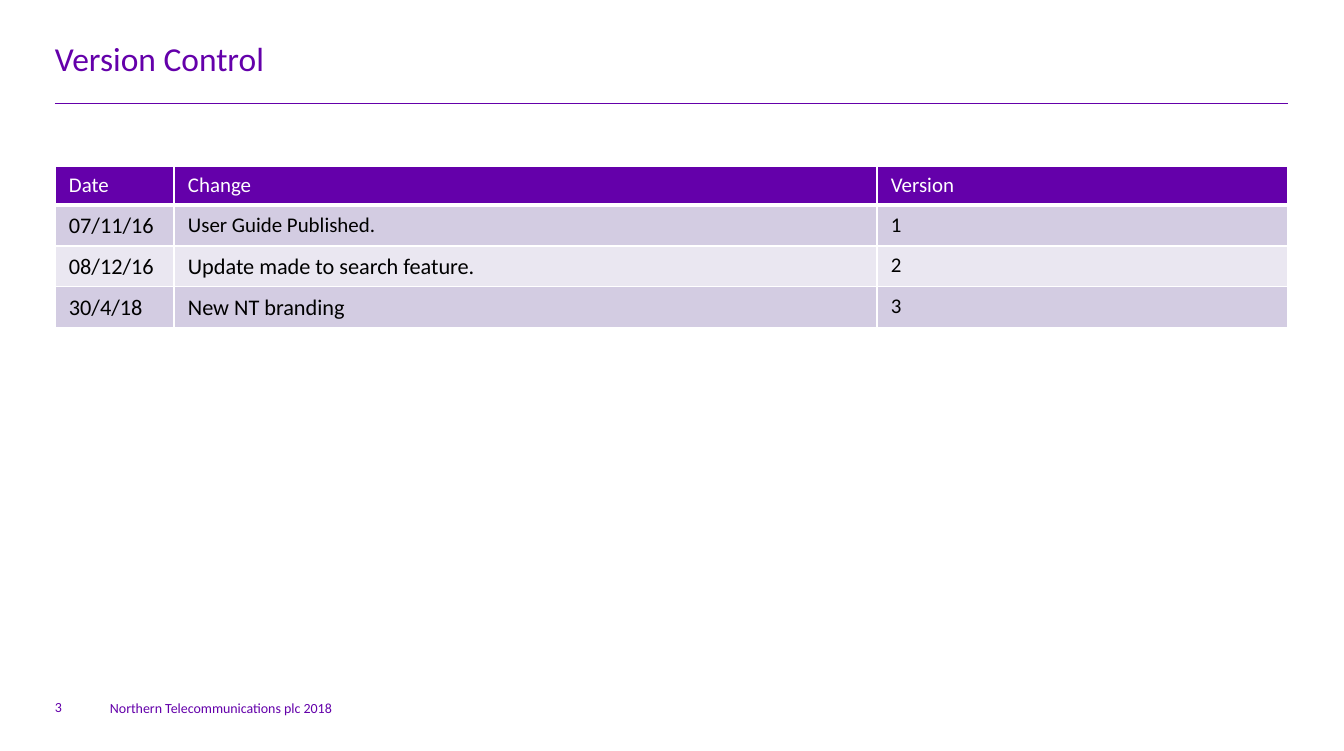
from lxml import etree
from pptx import Presentation
from pptx.dml.color import RGBColor
from pptx.enum.shapes import MSO_CONNECTOR as CONN
from pptx.enum.text import MSO_ANCHOR as ANCHOR
from pptx.oxml.ns import qn
from pptx.util import Pt

# Content
PURPLE, WHITE, BLACK = "6400AA", "FFFFFF", "000000"
BANDS = ["D3CCE2", "EAE7F1"]
FONT = "Calibri"
# text, box in px, size, anchor
LABELS = [
    ("Version Control", (55, 35, 1233, 47), 24, ANCHOR.MIDDLE),
    ("3", (55, 684, 39, 31), 10, ANCHOR.BOTTOM),
    ("Northern Telecommunications plc 2018", (110, 687, 237, 29), 10, ANCHOR.BOTTOM),
]
HEADER = ["Date", "Change", "Version"]
CHANGES = [
    [("07/11/16", 16), ("User Guide Published.", 15), ("1", 15)],
    [("08/12/16", 16), ("Update made to search feature.", 16), ("2", 15)],
    [("30/4/18", 16), ("New NT branding", 16), ("3", 15)],
]
COLUMNS = [119, 703, 411]
LEFT, RIGHT, RULE_Y = 55, 1288, 103
TABLE_TOP, ROW_HEIGHT = 166, 38
PAD_X, PAD_Y = 14, 7


def px(n):
    return round(n * 914400 / 100.4)


def rgb(value):
    return RGBColor.from_string(value)


def add_text(tf, text, size, color):
    r = tf.paragraphs[0].add_run()
    r.text = text
    r.font.name = FONT
    r.font.size = Pt(size)
    r.font.color.rgb = rgb(color)


def set_borders(cell, widths):
    tcPr = cell._tc.get_or_add_tcPr()
    for i, (side, width) in enumerate(widths.items()):
        ln = etree.Element(qn(f"a:ln{side}"), w=str(Pt(width)))
        fill = etree.SubElement(ln, qn("a:solidFill"))
        etree.SubElement(fill, qn("a:srgbClr"), val=WHITE)
        tcPr.insert(i, ln)


prs = Presentation()
prs.slide_width, prs.slide_height = px(1344), px(751)
s = prs.slides.add_slide(prs.slide_layouts[6])

# Rule under the title
rule = s.shapes.add_connector(CONN.STRAIGHT, px(LEFT), px(RULE_Y), px(RIGHT), px(RULE_Y))
rule.line.color.rgb = rgb(PURPLE)
rule.line.width = Pt(0.25)
etree.SubElement(rule._element.spPr, qn("a:effectLst"))

# Title, slide number and footer
for text, box, size, anchor in LABELS:
    tf = s.shapes.add_textbox(*map(px, box)).text_frame
    tf.word_wrap = True
    tf.vertical_anchor = anchor
    tf.margin_left = tf.margin_top = tf.margin_right = tf.margin_bottom = 0
    add_text(tf, text, size, PURPLE)

# Version table
rows = [[(name, 15) for name in HEADER]] + CHANGES
table = s.shapes.add_table(len(rows), len(COLUMNS), px(LEFT), px(TABLE_TOP),
                           px(sum(COLUMNS)), px(ROW_HEIGHT * len(rows))).table
for column, width in zip(table.columns, COLUMNS):
    column.width = px(width)
for i, row in enumerate(rows):
    table.rows[i].height = px(ROW_HEIGHT)
    for j, (text, size) in enumerate(row):
        cell = table.cell(i, j)
        cell.margin_left = cell.margin_right = px(PAD_X)
        cell.margin_top = cell.margin_bottom = px(PAD_Y)
        cell.fill.solid()
        cell.fill.fore_color.rgb = rgb(BANDS[(i - 1) % 2] if i else PURPLE)
        set_borders(cell, {"L": 1, "R": 1, "T": 1, "B": 1 if i else 3})
        add_text(cell.text_frame, text, size, BLACK if i else WHITE)

prs.save("out.pptx")
